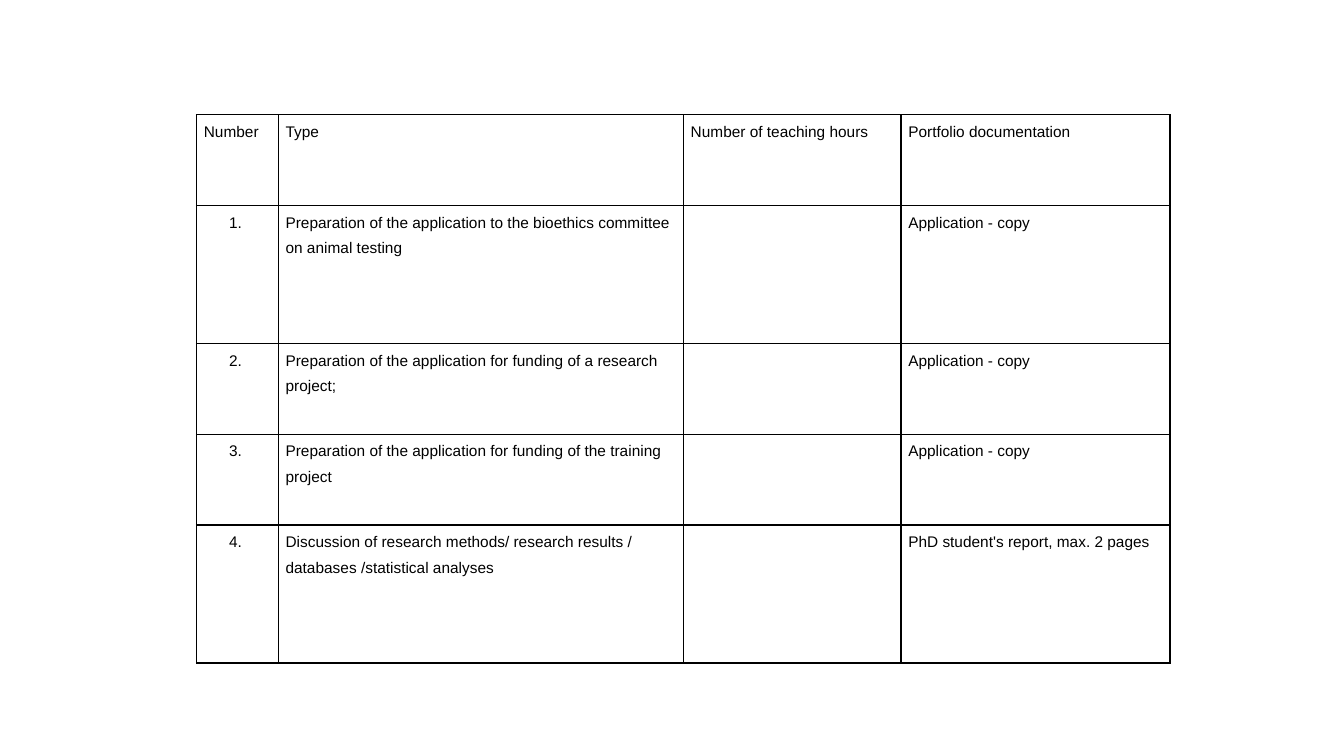
import lxml.etree
import pptx
import pptx.oxml.ns
import pptx.util

Pt = pptx.util.Pt
qn = pptx.oxml.ns.qn

COLORS = {"text": "000000", "border": "000000"}
COLUMN_WIDTHS = [58.4, 289.4, 155.4, 192.2]
SHORT_ROW, TALL_ROW = 64.8, 98.6
ROW_HEIGHTS = [SHORT_ROW, TALL_ROW, SHORT_ROW, SHORT_ROW, TALL_ROW]
ROWS = [
    ("Number", "Type", "Number of teaching hours", "Portfolio documentation"),
    ("1.", "Preparation of the application to the bioethics committee on animal testing",
     "", "Application - copy"),
    ("2.", "Preparation of the application for funding of a research project;",
     "", "Application - copy"),
    ("3.", "Preparation of the application for funding of the training project",
     "", "Application - copy"),
    ("4.", "Discussion of research methods/ research results / databases /statistical analyses",
     "", "PhD student's report, max. 2 pages"),
]


def add_borders(cell):
    properties = cell._tc.get_or_add_tcPr()
    for position, side in enumerate(("a:lnL", "a:lnR", "a:lnT", "a:lnB")):
        line = lxml.etree.Element(qn(side), w=str(Pt(1)))
        fill = lxml.etree.SubElement(line, qn("a:solidFill"))
        lxml.etree.SubElement(fill, qn("a:srgbClr"), val=COLORS["border"])
        # Border lines must precede the cell fill.
        properties.insert(position, line)


def write_cell(cell, text, indent):
    cell.margin_left = cell.margin_right = Pt(5.2)
    cell.margin_top = cell.margin_bottom = 0
    cell.fill.background()
    add_borders(cell)
    cell.text = text
    paragraph = cell.text_frame.paragraphs[0]
    paragraph.line_spacing = 1.5
    paragraph.space_before = paragraph.space_after = Pt(6)
    paragraph.font.name = "Arial"
    paragraph.font.size = Pt(11)
    paragraph.font.color.rgb = pptx.dml.color.RGBColor.from_string(COLORS["text"])
    if indent:
        properties = paragraph._p.get_or_add_pPr()
        properties.set("marL", str(Pt(indent)))
        properties.set("indent", "0")


def add_portfolio_table(slide):
    frame = slide.shapes.add_table(
        len(ROWS), len(COLUMN_WIDTHS), Pt(140.4), Pt(82),
        Pt(sum(COLUMN_WIDTHS)), Pt(sum(ROW_HEIGHTS)))
    table = frame.table
    table.first_row = table.horz_banding = False
    for column, width in zip(table.columns, COLUMN_WIDTHS):
        column.width = Pt(width)
    for row, height in zip(table.rows, ROW_HEIGHTS):
        row.height = Pt(height)
    for row_index, texts in enumerate(ROWS):
        for column_index, text in enumerate(texts):
            is_row_number = row_index > 0 and column_index == 0
            write_cell(table.cell(row_index, column_index), text, 18 if is_row_number else 0)


def main():
    presentation = pptx.Presentation()
    presentation.slide_width, presentation.slide_height = Pt(960), Pt(540)
    slide = presentation.slides.add_slide(presentation.slide_layouts[6])
    add_portfolio_table(slide)
    presentation.save("out.pptx")


if __name__ == "__main__":
    main()
